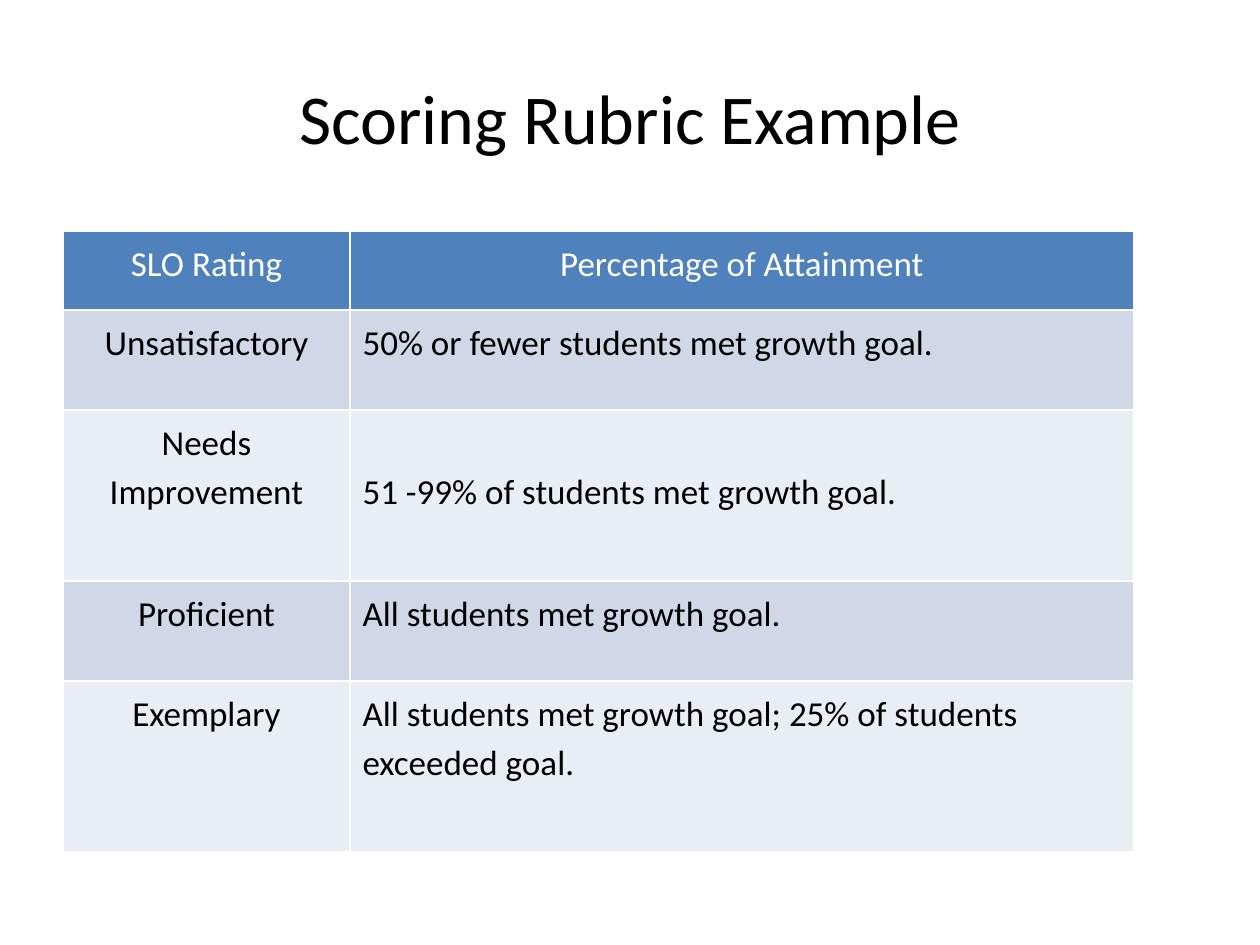
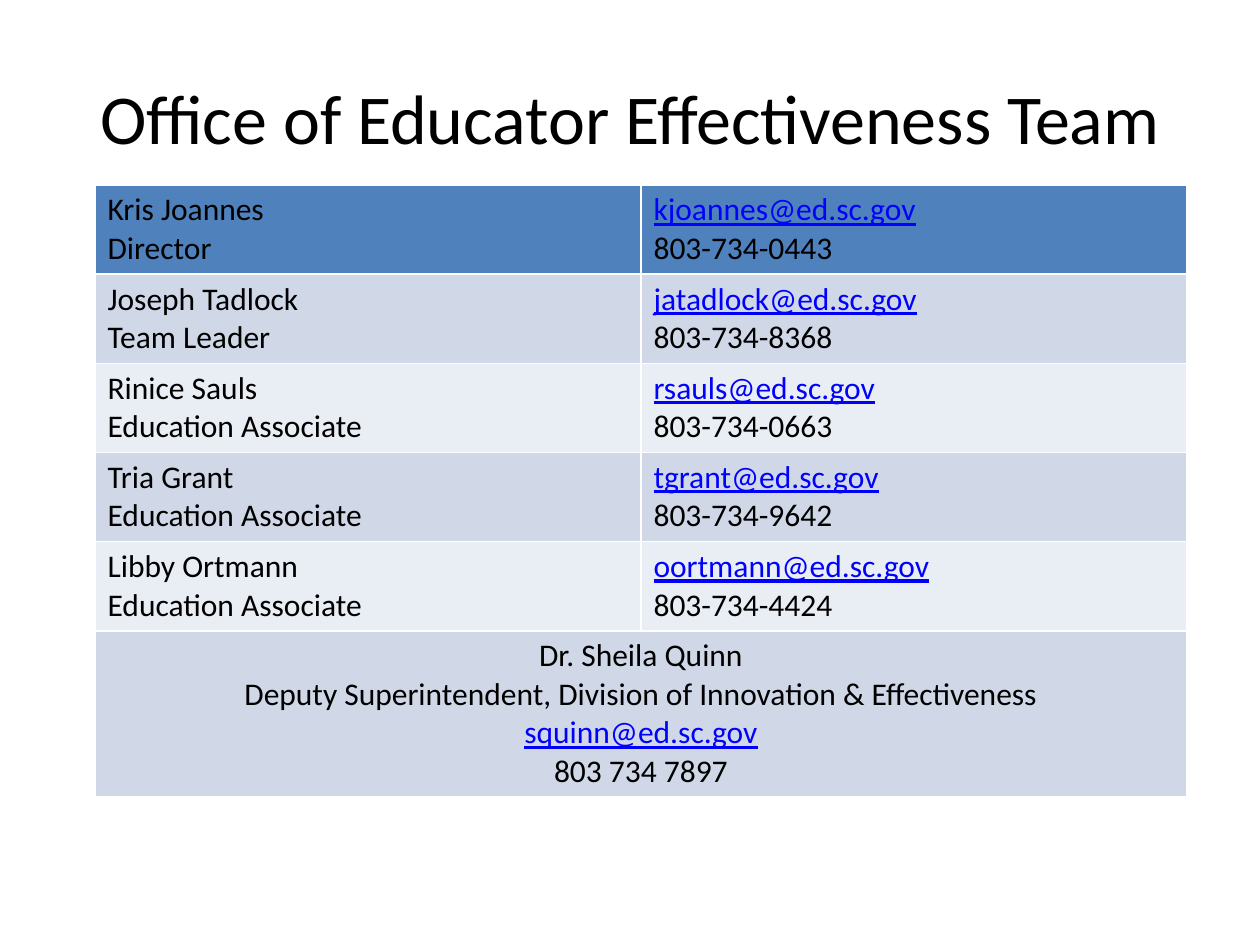
from dataclasses import dataclass

from lxml import etree
from pptx import Presentation
from pptx import util as u
from pptx.dml.color import RGBColor
from pptx.enum import text
from pptx.oxml.ns import qn

SCALE = 914400 / 126  # EMU per px
FONT = "Calibri"
BLACK = RGBColor(0x00, 0x00, 0x00)
WHITE = RGBColor(0xFF, 0xFF, 0xFF)
BLUE = RGBColor(0x4F, 0x81, 0xBD)
PALE = RGBColor(0xD0, 0xD8, 0xE8)
MIST = RGBColor(0xE9, 0xED, 0xF4)
LINK = RGBColor(0x00, 0x00, 0xFF)
PAD = 6  # usual top margin of a cell
LEAD = 49  # one line of the rubric


@dataclass(frozen=True)
class Cell:
    lines: tuple[str, ...]
    mid: bool = False
    top: int = PAD


@dataclass(frozen=True)
class Grid:
    title: str
    left: int
    top: int
    cols: tuple[int, ...]
    rows: tuple[int, ...]
    cells: list[list[Cell]]
    size: int
    head: RGBColor
    lead: float


def px(n: int) -> u.Emu:
    return u.Emu(round(n * SCALE))


def add_run(para, words: str, size: int, ink: RGBColor) -> None:
    """Add a run; an e-mail address takes the link look."""
    run = para.add_run()
    run.text = words
    font = run.font
    font.name, font.size, font.bold = FONT, u.Pt(size), False
    mail = "@" in words
    font.underline = mail
    font.color.rgb = LINK if mail else ink


def add_edge(cell) -> None:
    """Put a thin white line on all four sides; call before the fill is set."""
    props = cell._tc.get_or_add_tcPr()
    for side in ("lnL", "lnR", "lnT", "lnB"):
        line = etree.SubElement(props, qn(f"a:{side}"), w=str(u.Pt(1)))
        fill = etree.SubElement(line, qn("a:solidFill"))
        etree.SubElement(fill, qn("a:srgbClr"), val=str(WHITE))


def fill_text(cell, data: Cell, size: int, ink: RGBColor, lead: float) -> None:
    cell.margin_top = px(data.top)
    frame = cell.text_frame
    for i, words in enumerate(data.lines):
        para = frame.add_paragraph() if i else frame.paragraphs[0]
        para.alignment = text.PP_ALIGN.CENTER if data.mid else text.PP_ALIGN.LEFT
        para.line_spacing = lead
        add_run(para, words, size, ink)


def add_title(slide, words: str) -> None:
    title = slide.shapes.title
    title.left, title.top, title.width, title.height = map(px, (63, 38, 1134, 158))
    frame = title.text_frame
    frame.word_wrap = True
    frame.vertical_anchor = text.MSO_ANCHOR.MIDDLE
    para = frame.paragraphs[0]
    para.alignment = text.PP_ALIGN.CENTER
    add_run(para, words, 40, BLACK)


def add_grid(slide, grid: Grid) -> None:
    """Draw the table; a row with one cell spans all columns."""
    table = slide.shapes.add_table(
        len(grid.rows), len(grid.cols), px(grid.left), px(grid.top),
        px(sum(grid.cols)), px(sum(grid.rows))).table
    for col, wide in zip(table.columns, grid.cols):
        col.width = px(wide)
    last = len(grid.cols) - 1
    for r, (high, row) in enumerate(zip(grid.rows, grid.cells)):
        table.rows[r].height = px(high)
        if len(row) == 1:
            table.cell(r, 0).merge(table.cell(r, last))
        shade = BLUE if r == 0 else PALE if r % 2 else MIST
        for c in range(last + 1):
            cell = table.cell(r, c)
            add_edge(cell)
            cell.fill.solid()
            cell.fill.fore_color.rgb = shade
        for c, data in enumerate(row):
            ink = BLACK if r else grid.head
            fill_text(table.cell(r, c), data, grid.size, ink, grid.lead)


def rate(name: str, goal: str, top: int = PAD) -> list[Cell]:
    return [Cell((name,), mid=True), Cell((goal,), top=top)]


def staff(name: str, role: str, mail: str, phone: str) -> list[Cell]:
    return [Cell((name, role)), Cell((mail, phone))]


RUBRIC = Grid(
    "Scoring Rubric Example", 63, 231, (287, 784), (79, 100, 171, 100, 171),
    [
        [Cell(("SLO Rating",), mid=True), Cell(("Percentage of Attainment",), mid=True)],
        rate("Unsatisfactory", "50% or fewer students met growth goal."),
        rate("Needs Improvement", "51 -99% of students met growth goal.", PAD + LEAD),
        rate("Proficient", "All students met growth goal."),
        rate("Exemplary", "All students met growth goal; 25% of students exceeded goal."),
    ],
    size=20, head=WHITE, lead=1.15)

TEAM = Grid(
    "Office of Educator Effectiveness Team", 95, 185, (546, 546), (84,) * 5 + (156,),
    [
        staff("Kris Joannes", "Director", "kjoannes@ed.sc.gov", "803-734-0443"),
        staff("Joseph Tadlock", "Team Leader", "jatadlock@ed.sc.gov", "803-734-8368"),
        staff("Rinice Sauls", "Education Associate", "rsauls@ed.sc.gov", "803-734-0663"),
        staff("Tria Grant", "Education Associate", "tgrant@ed.sc.gov", "803-734-9642"),
        staff("Libby Ortmann", "Education Associate", "oortmann@ed.sc.gov", "803-734-4424"),
        [Cell(("Dr. Sheila Quinn",
               "Deputy Superintendent, Division of Innovation & Effectiveness",
               "squinn@ed.sc.gov", "803 734 7897"), mid=True)],
    ],
    size=18, head=BLACK, lead=1.0)


def main() -> None:
    deck = Presentation()
    deck.slide_width, deck.slide_height = px(1260), px(945)
    for grid in (RUBRIC, TEAM):
        slide = deck.slides.add_slide(deck.slide_layouts[5])
        add_title(slide, grid.title)
        add_grid(slide, grid)
    deck.save("out.pptx")


if __name__ == "__main__":
    main()
